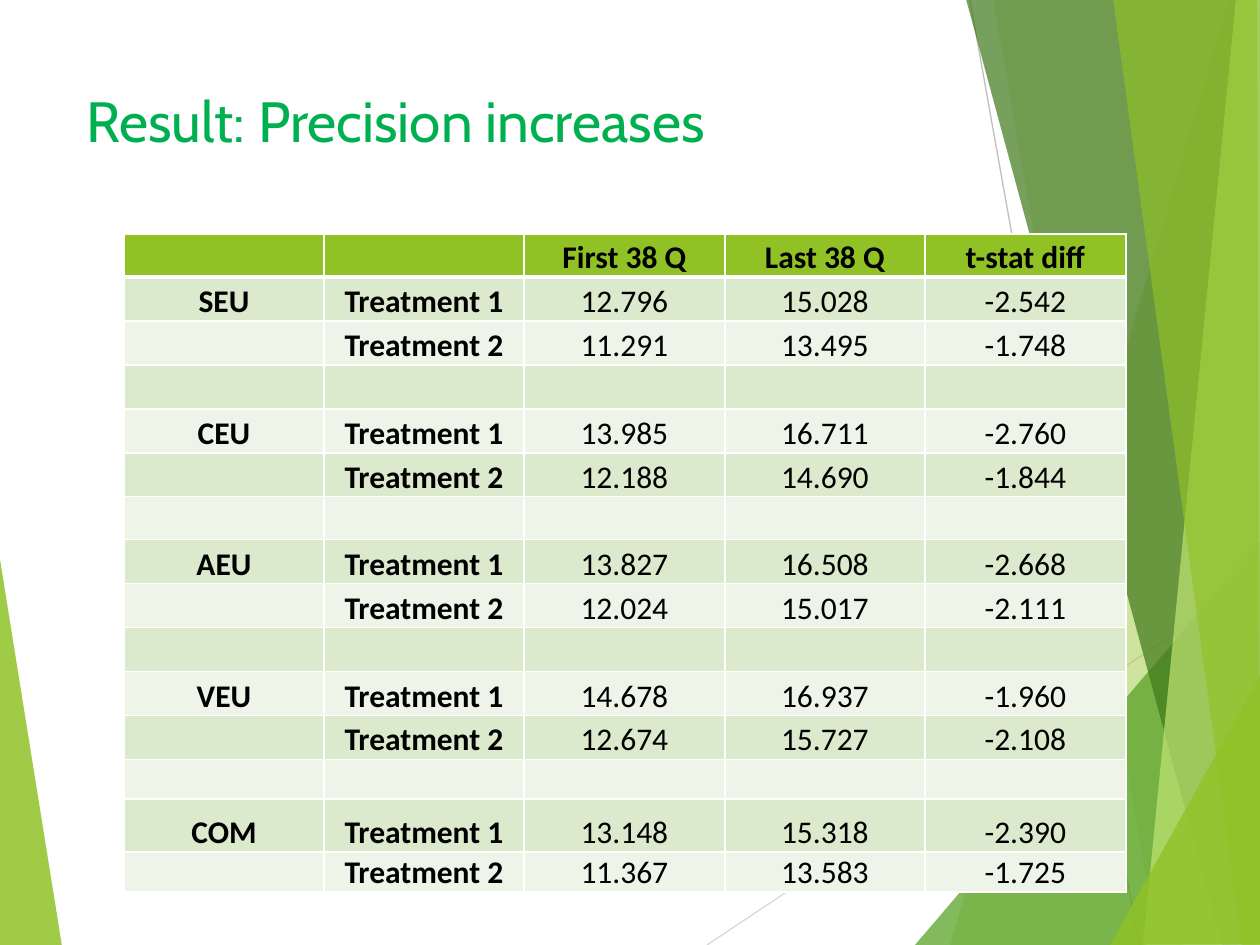
from lxml import etree
from pptx import Presentation
from pptx import util as u
from pptx.dml.color import RGBColor
from pptx.enum import shapes, text
from pptx.oxml import ns

PX = 914400 / 126
GREEN, WHITE = "90C226", "FFFFFF"
WEDGE = [([(0, 0), (63, 393), (0, 392)], GREEN, 85)]
RAYS = [((0, 945), (554, 576), "D9D9D9"), ((263, 0), (432, 945), "BFBFBF")]
RIBBONS = [
    ([(522, 0), (243, 945), (556, 946), (554, 1)], GREEN, 30),
    ([(286, -1), (451, 945), (554, 945), (554, -1)], GREEN, 20),
    ([(208, 945), (553, 541), (554, 945)], "54A021", 72),
    ([(259, -1), (515, 945), (554, 944), (554, -1)], "3F7819", 70),
    ([(529, -1), (436, 945), (554, 945), (553, -1)], "C0E474", 70),
    ([(406, -1), (535, 945), (553, 945), (550, -1)], GREEN, 65),
    ([(403, 945), (554, 674), (554, 944)], GREEN, 80),
]
HEADER = ["", "", "First 38 Q", "Last 38 Q", "t-stat diff"]
RESULTS = {
    "SEU": [("12.796", "15.028", "-2.542"), ("11.291", "13.495", "-1.748")],
    "CEU": [("13.985", "16.711", "-2.760"), ("12.188", "14.690", "-1.844")],
    "AEU": [("13.827", "16.508", "-2.668"), ("12.024", "15.017", "-2.111")],
    "VEU": [("14.678", "16.937", "-1.960"), ("12.674", "15.727", "-2.108")],
    "COM": [("13.148", "15.318", "-2.390"), ("11.367", "13.583", "-1.725")],
}


def px(n):
    return u.Emu(round(n * PX))


def paint(color_format, color, alpha=100):
    """Set a solid fill or a font colour, with opacity in percent for fills."""
    if hasattr(color_format, "solid"):
        color_format.solid()
        color_format = color_format.fore_color
    color_format.rgb = RGBColor.from_string(color)
    if alpha < 100:
        clr = color_format._xFill.find(ns.qn("a:srgbClr"))
        etree.SubElement(clr, ns.qn("a:alpha"), val=str(alpha * 1000))


def assign(target, values):
    for name, value in values.items():
        setattr(target, name, value)


def style_run(p, wording, font, color):
    r = p.add_run()
    r.text = wording
    assign(r.font, font)
    paint(r.font.color, color)


def add_polygons(s, x, y, polygons):
    for points, color, alpha in polygons:
        (x0, y0), *rest = [(x + a, y + b) for a, b in points]
        builder = s.shapes.build_freeform(x0, y0, scale=PX)
        builder.add_line_segments(rest, close=True)
        sp = builder.convert_to_shape()
        sp.shadow.inherit = False
        sp.line.fill.background()
        paint(sp.fill, color, alpha)


def add_rays(s, x, y, rays):
    for (x1, y1), (x2, y2), color in rays:
        line = s.shapes.add_connector(shapes.MSO_CONNECTOR.STRAIGHT,
                                      px(x + x1), px(y + y1), px(x + x2), px(y + y2))
        paint(line.line.fill, color)
        line.line.width = u.Pt(0.75)
        etree.SubElement(line._element.spPr, ns.qn("a:effectLst"))


def add_title(s, x, y, w, h, wording):
    tf = s.shapes.add_textbox(px(x), px(y), px(w), px(h)).text_frame
    assign(tf, {"word_wrap": True, "vertical_anchor": text.MSO_ANCHOR.MIDDLE})
    style_run(tf.paragraphs[0], wording, {"name": "Cabin", "size": u.Pt(32.4)}, "00B050")


def set_borders(cell, bottom):
    tc_pr = cell._tc.get_or_add_tcPr()
    for i, (side, width) in enumerate({"L": 1, "R": 1, "T": 1, "B": bottom}.items()):
        ln = etree.Element(ns.qn(f"a:ln{side}"), w=str(u.Pt(width)))
        fill = etree.SubElement(ln, ns.qn("a:solidFill"))
        etree.SubElement(fill, ns.qn("a:srgbClr"), val=WHITE)
        tc_pr.insert(i, ln)


def table_rows():
    rows = [HEADER]
    for model, treatments in RESULTS.items():
        if len(rows) > 1:
            rows.append([""] * len(HEADER))
        for n, values in enumerate(treatments, 1):
            rows.append([model if n == 1 else "", f"Treatment {n}", *values])
    return rows


def split(total, count):
    """Whole-pixel sizes of equal parts that add up to total."""
    edges = [total * i // count for i in range(count + 1)]
    return [b - a for a, b in zip(edges, edges[1:])]


def add_results(s, x, y, w, h):
    rows = table_rows()
    last_heights = [39, 53, 40]
    widths = split(w, len(HEADER))
    heights = split(h - sum(last_heights), len(rows) - len(last_heights)) + last_heights
    table = s.shapes.add_table(len(rows), len(HEADER), px(x), px(y), px(w), px(h)).table
    for column, width in zip(table.columns, widths):
        column.width = px(width)
    for i, (row, height) in enumerate(zip(rows, heights)):
        table.rows[i].height = px(height)
        for j, wording in enumerate(row):
            cell = table.cell(i, j)
            assign(cell, {"margin_left": px(1), "margin_right": px(1), "margin_top": px(1),
                          "margin_bottom": 0, "vertical_anchor": text.MSO_ANCHOR.BOTTOM})
            paint(cell.fill, GREEN if i == 0 else ("EEF4E8", "DBE9CD")[i % 2])
            set_borders(cell, 3 if i == 0 else 1)
            if wording:
                p = cell.text_frame.paragraphs[0]
                p.alignment = text.PP_ALIGN.CENTER
                style_run(p, wording, {"name": "Calibri", "size": u.Pt(18),
                                       "bold": i == 0 or j < 2}, "000000")


def main():
    prs = Presentation()
    assign(prs, {"slide_width": px(1260), "slide_height": px(945)})
    s = prs.slides.add_slide(prs.slide_layouts[6])
    paint(s.background.fill, WHITE)
    add_polygons(s, -1, 553, WEDGE)
    add_rays(s, 707, 0, RAYS)
    add_polygons(s, 707, 0, RIBBONS)
    add_results(s, 124, 234, 1002, 658)
    add_title(s, 74, 76, 1133, 87, "Result: Precision increases")
    prs.save("out.pptx")


if __name__ == "__main__":
    main()
